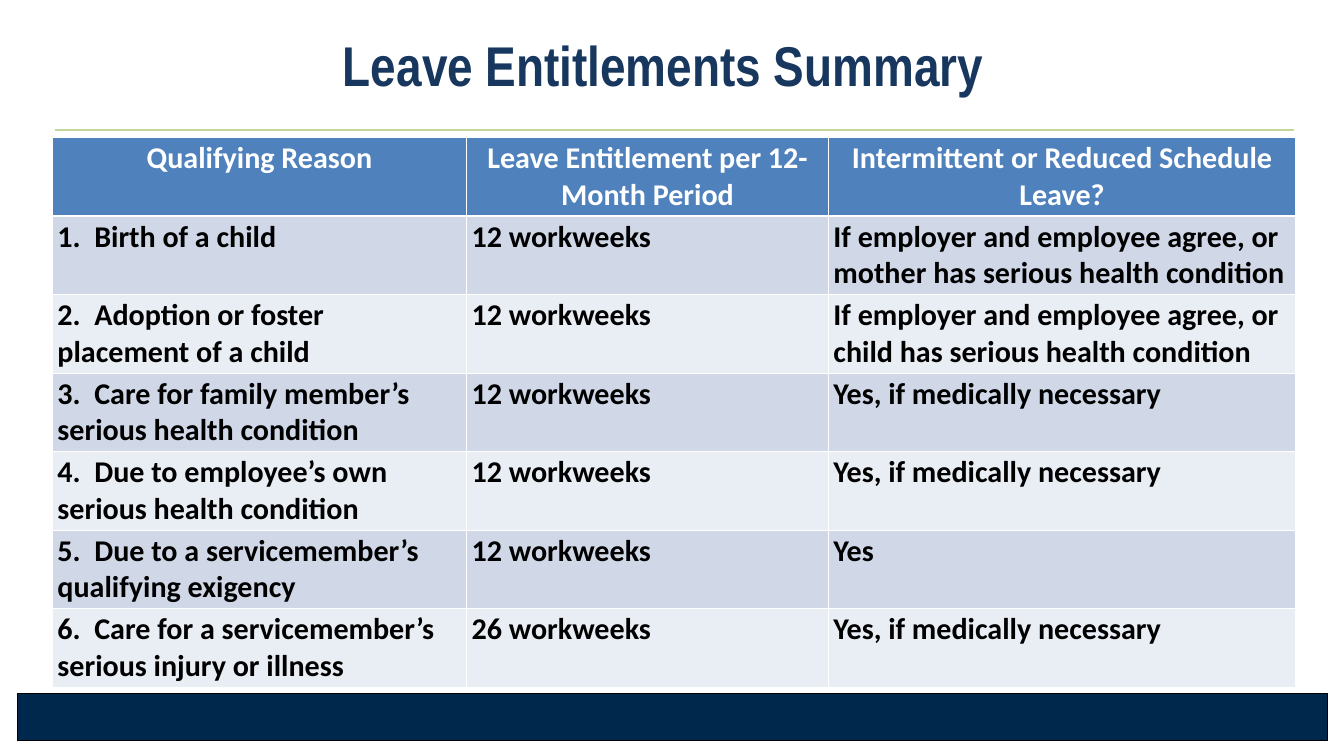
from lxml.etree import SubElement
from pptx import Presentation
from pptx.dml.color import RGBColor
from pptx.enum.shapes import MSO_CONNECTOR, MSO_SHAPE
from pptx.enum.text import MSO_ANCHOR, PP_ALIGN
from pptx.oxml.ns import qn
from pptx.util import Inches, Pt

THEME = {
    "footer": RGBColor.from_string("00274C"),
    "outline": RGBColor.from_string("000000"),
    "rule": RGBColor.from_string("C3D69B"),
    "heading": RGBColor.from_string("17375E"),
    "header": RGBColor.from_string("4F81BD"),
    "bands": [RGBColor.from_string("E9EDF4"), RGBColor.from_string("D0D8E8")],
    "grid": "FFFFFF",
    "title_font": {"name": "Arial Narrow", "size": Pt(80), "bold": True},
    "table_font": {"name": "Calibri", "size": Pt(43), "bold": True},
    "header_text": RGBColor.from_string("FFFFFF"),
    "body_text": RGBColor.from_string("000000"),
}

deck = Presentation()
deck.slide_width, deck.slide_height = Inches(26.67), Inches(15)
slide = deck.slides.add_slide(deck.slide_layouts[6])


def across(percent):
    return round(deck.slide_width * percent / 100)


def down(percent):
    return round(deck.slide_height * percent / 100)


footer = slide.shapes.add_shape(
    MSO_SHAPE.RECTANGLE, across(1.27), down(91.67), across(97.49), down(6.33)
)
footer.shadow.inherit = False
footer.fill.solid()
footer.fill.fore_color.rgb = THEME["footer"]
footer.line.color.rgb = THEME["outline"]
footer.line.width = Pt(1)

rule = slide.shapes.add_connector(
    MSO_CONNECTOR.STRAIGHT, across(4.09), down(17.2), across(96.25), down(17.2)
)
rule.line.color.rgb = THEME["rule"]
rule.line.width = Pt(3)
SubElement(rule.element.spPr, qn("a:effectLst"))

entitlements = [
    ("Qualifying Reason", "Leave Entitlement per 12-Month Period",
     "Intermittent or Reduced Schedule Leave?"),
    ("1.  Birth of a child", "12 workweeks",
     "If employer and employee agree, or mother has serious health condition"),
    ("2.  Adoption or foster placement of a child", "12 workweeks",
     "If employer and employee agree, or child has serious health condition"),
    ("3.  Care for family member’s serious health condition", "12 workweeks",
     "Yes, if medically necessary"),
    ("4.  Due to employee’s own serious health condition", "12 workweeks",
     "Yes, if medically necessary"),
    ("5.  Due to a servicemember’s qualifying exigency", "12 workweeks", "Yes"),
    ("6.  Care for a servicemember’s serious injury or illness", "26 workweeks",
     "Yes, if medically necessary"),
]
column_shares = [30.82, 26.92, 34.76]
row_share = 10.22

summary = slide.shapes.add_table(
    len(entitlements), len(column_shares), across(3.9), down(18.2),
    across(sum(column_shares)), down(row_share * len(entitlements))
).table
for column, share in zip(summary.columns, column_shares):
    column.width = across(share)

for row_number, entries in enumerate(entitlements):
    is_header = row_number == 0
    borders = {
        "a:lnL": 1, "a:lnR": 1,
        "a:lnT": 3 if row_number == 1 else 1,
        "a:lnB": 3 if is_header else 1,
    }
    for column_number, entry in enumerate(entries):
        cell = summary.cell(row_number, column_number)
        cell.text = entry
        for side, width in borders.items():
            border = SubElement(cell._tc.get_or_add_tcPr(), qn(side), w=str(Pt(width)))
            SubElement(SubElement(border, qn("a:solidFill")), qn("a:srgbClr"), val=THEME["grid"])
        cell.fill.solid()
        cell.fill.fore_color.rgb = THEME["header"] if is_header else THEME["bands"][row_number % 2]
        paragraph = cell.text_frame.paragraphs[0]
        paragraph.alignment = PP_ALIGN.CENTER if is_header else PP_ALIGN.LEFT
        for attribute, setting in THEME["table_font"].items():
            setattr(paragraph.runs[0].font, attribute, setting)
        paragraph.runs[0].font.color.rgb = THEME["header_text" if is_header else "body_text"]

title = slide.shapes.add_textbox(across(3.11), down(4.2), across(92.5), down(11.4)).text_frame
title_format = {
    "word_wrap": True, "vertical_anchor": MSO_ANCHOR.MIDDLE,
    "margin_left": across(0.9), "margin_right": across(0.9),
    "margin_top": down(0.8), "margin_bottom": down(0.8),
}
for attribute, setting in title_format.items():
    setattr(title, attribute, setting)
heading = title.paragraphs[0]
heading.alignment = PP_ALIGN.CENTER
heading.line_spacing = Pt(65)
heading_run = heading.add_run()
heading_run.text = "Leave Entitlements Summary"
for attribute, setting in THEME["title_font"].items():
    setattr(heading_run.font, attribute, setting)
heading_run.font.color.rgb = THEME["heading"]

deck.save("out.pptx")
